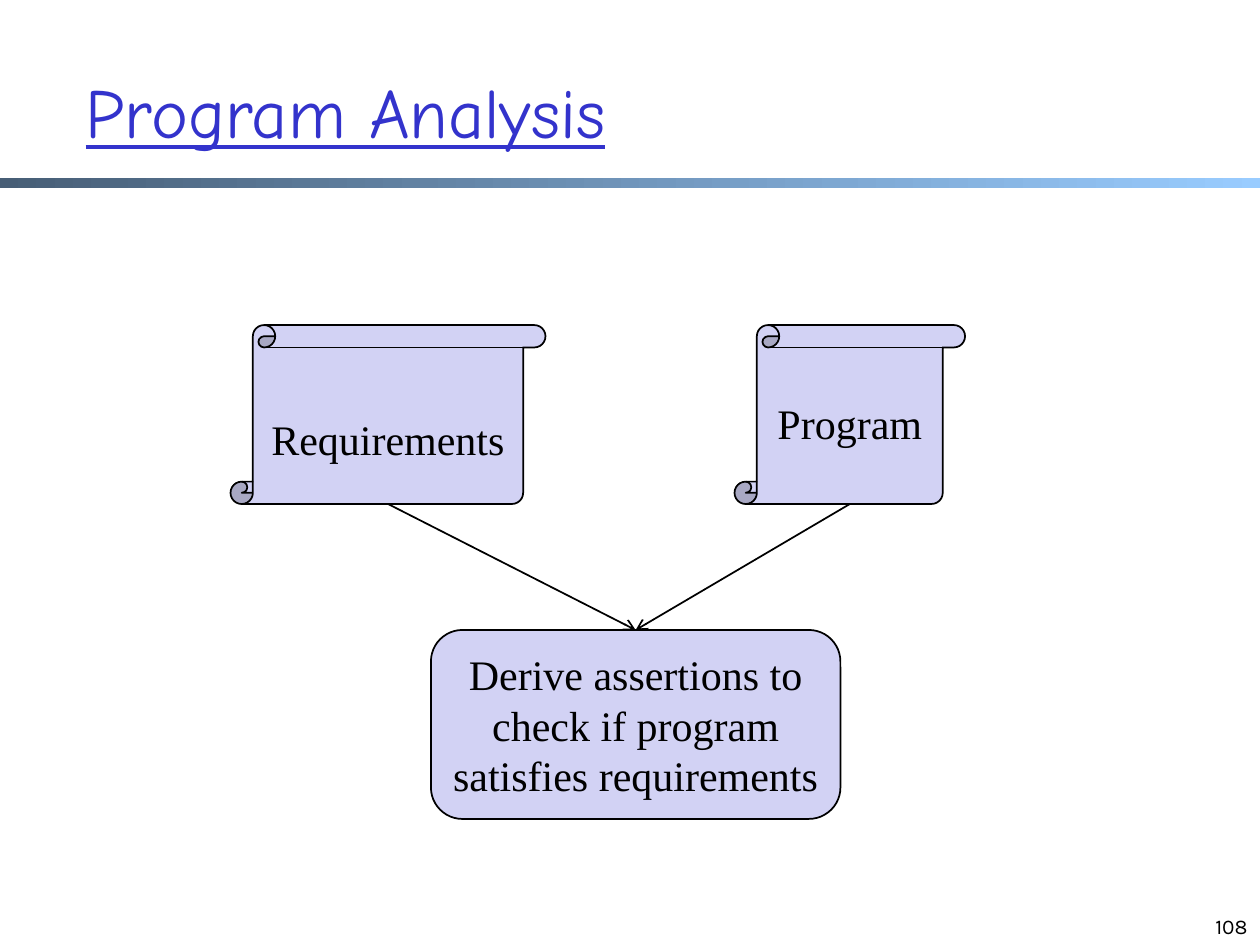
"""Build the Program Analysis slide."""
import pptx
import pptx.dml.color
import pptx.enum.shapes
import pptx.enum.text
import pptx.oxml
import pptx.oxml.ns
import pptx.util
from pptx.util import Inches

SHAPE = pptx.enum.shapes.MSO_SHAPE
ALIGN = pptx.enum.text.PP_ALIGN
ANCHOR = pptx.enum.text.MSO_ANCHOR
SERIF = "Times New Roman"
BLACK, LILAC = "000000", "D2D2F4"
TITLE, NUMBER = "Program Analysis", "108"
BAR_COLOURS = ("475E76", "99CCFF")
SOURCES = [
    ("Requirements", (1.83, 2.58, 2.5, 1.42), 0.35),
    ("Program", (5.83, 2.58, 1.83, 1.42), 0.09),
]
RESULT = ("Derive assertions to check if program satisfies requirements",
          (3.42, 5, 3.25, 1.5), 0.05)


def colour(value):
    return pptx.dml.color.RGBColor.from_string(value)


def write(box, text, font, size, ink, align, anchor, top=0.05, side=0.1):
    frame = box.text_frame
    frame.word_wrap = True
    frame.vertical_anchor = anchor
    frame.margin_left = frame.margin_right = Inches(side)
    frame.margin_top, frame.margin_bottom = Inches(top), Inches(0.05)
    para = frame.paragraphs[0]
    para.text = text
    para.alignment = align
    para.font.name = font
    para.font.size = pptx.util.Pt(size)
    para.font.color.rgb = colour(ink)
    return para


def outline(shape):
    shape.line.color.rgb = colour(BLACK)
    shape.line.width = pptx.util.Pt(1)


def add_node(page, kind, text, place, top):
    node = page.shapes.add_shape(kind, *map(Inches, place))
    node.shadow.inherit = False
    node.fill.solid()
    node.fill.fore_color.rgb = colour(LILAC)
    outline(node)
    write(node, text, SERIF, 24, BLACK, ALIGN.CENTER, ANCHOR.MIDDLE, top, 0.08)
    return node


def add_arrow(page, source, target):
    arrow = page.shapes.add_connector(
        pptx.enum.shapes.MSO_CONNECTOR.STRAIGHT,
        source.left + source.width // 2, source.top + source.height,
        target.left + target.width // 2, target.top)
    outline(arrow)
    head = pptx.oxml.parse_xml(
        f'<a:tailEnd {pptx.oxml.ns.nsdecls("a")} type="arrow"/>')
    arrow.line._get_or_add_ln().append(head)
    effects = pptx.oxml.parse_xml(f'<a:effectLst {pptx.oxml.ns.nsdecls("a")}/>')
    arrow._element.spPr.append(effects)


def add_bar(page):
    bar = page.shapes.add_shape(
        SHAPE.RECTANGLE, 0, Inches(1.41), Inches(10), Inches(0.08))
    bar.shadow.inherit = False
    bar.line.fill.background()
    bar.fill.gradient()
    bar.fill.gradient_angle = 0
    for stop, value in zip(bar.fill.gradient_stops, BAR_COLOURS):
        stop.color.rgb = colour(value)


def main():
    deck = pptx.Presentation()
    deck.slide_width, deck.slide_height = Inches(10), Inches(7.5)
    page = deck.slides.add_slide(deck.slide_layouts[5])
    add_bar(page)

    title = page.shapes.title
    title.left, title.top = Inches(0.58), Inches(0.25)
    title.width, title.height = Inches(8.5), Inches(1.25)
    heading = write(title, TITLE, "Comic Neue", 40, "3333CC",
                    ALIGN.LEFT, ANCHOR.MIDDLE)
    heading.font.underline = True

    number = page.shapes.add_textbox(*map(Inches, (7.67, 7, 2.33, 0.5)))
    write(number, NUMBER, "Karla", 12, BLACK, ALIGN.RIGHT, ANCHOR.BOTTOM)

    result = add_node(page, SHAPE.ROUNDED_RECTANGLE, *RESULT)
    for source in SOURCES:
        scroll = add_node(page, SHAPE.VERTICAL_SCROLL, *source)
        add_arrow(page, scroll, result)

    deck.save("out.pptx")


if __name__ == "__main__":
    main()
